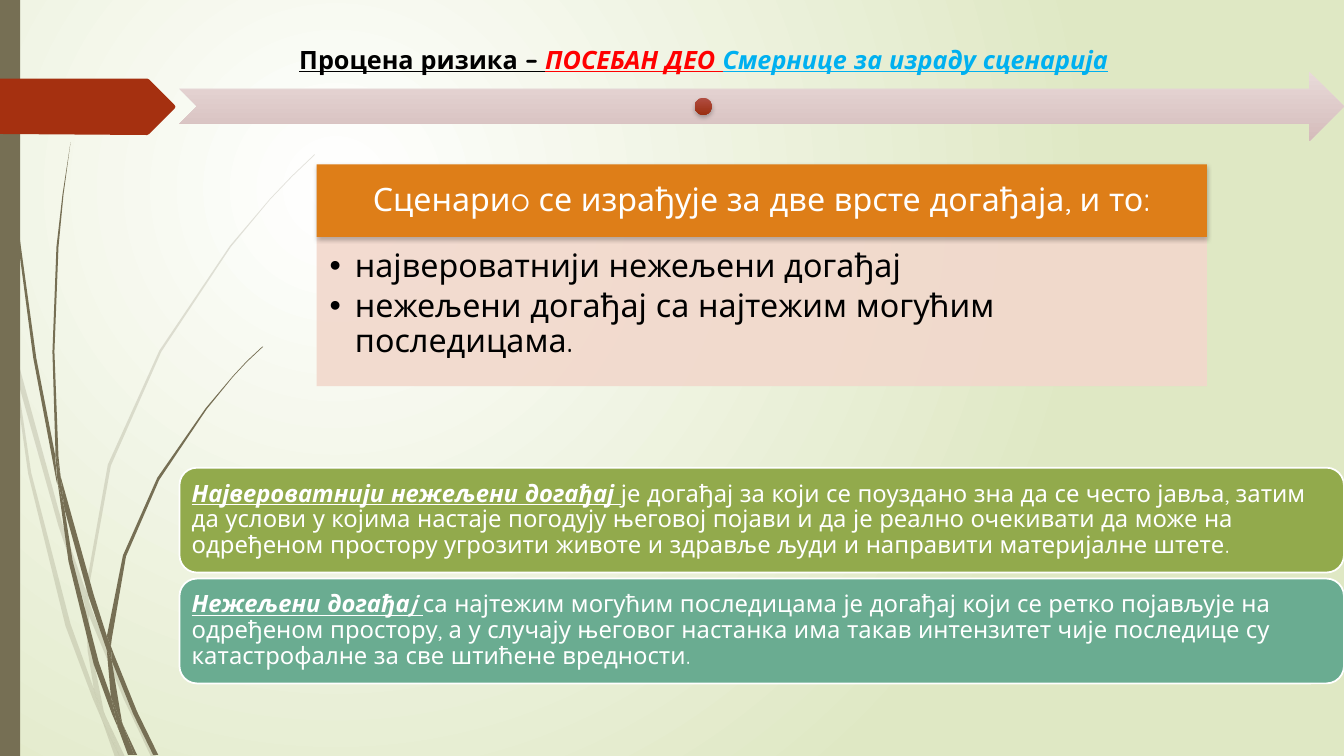
from lxml import etree
from pptx import Presentation
from pptx.dml.color import RGBColor
from pptx.enum.shapes import MSO_SHAPE
from pptx.enum.text import MSO_ANCHOR, MSO_AUTO_SIZE, PP_ALIGN
from pptx.oxml.ns import qn
from pptx.util import Pt

PX = 9144  # EMU in one px, 100 px to the inch
WIDTH, HEIGHT = 1333, 750
FONT = "Quicksand"
RECT, ROUNDED = MSO_SHAPE.RECTANGLE, MSO_SHAPE.ROUNDED_RECTANGLE
ARROW, OVAL = MSO_SHAPE.NOTCHED_RIGHT_ARROW, MSO_SHAPE.OVAL
TOP, MIDDLE, BOTTOM = MSO_ANCHOR.TOP, MSO_ANCHOR.MIDDLE, MSO_ANCHOR.BOTTOM
LEFT, CENTER = PP_ALIGN.LEFT, PP_ALIGN.CENTER
NO_AUTOFIT = MSO_AUTO_SIZE.NONE

WHITE = RGBColor(0xFF, 0xFF, 0xFF)
BLACK = RGBColor(0, 0, 0)
RED = RGBColor(0xFF, 0, 0)
SKY = RGBColor(0, 0xB0, 0xF0)
PALE_GREEN = RGBColor(0xDF, 0xE8, 0xC4)
OLIVE = RGBColor(0x76, 0x6F, 0x54)
RUST = RGBColor(0xA5, 0x30, 0x10)
ARROW_TOP, ARROW_BOTTOM = RGBColor(0xE8, 0xDA, 0xD9), RGBColor(0xD5, 0xBC, 0xBB)
DOT_TOP, DOT_BOTTOM = RGBColor(0xB1, 0x4E, 0x43), RGBColor(0x9A, 0x2D, 0x0F)
ORANGE = RGBColor(0xDE, 0x7E, 0x18)
PEACH = RGBColor(0xF2, 0xD8, 0xCC)
GREEN = RGBColor(0x92, 0xAA, 0x4C)
TEAL = RGBColor(0x6A, 0xAC, 0x91)

PALE_STALKS = [
    [(11, 350), (9, 322), (0, 282), (0, 299), (10, 344)],
    [(58, 522), (84, 599), (85, 586), (62, 520), (14, 345), (17, 376)],
    [(92, 607), (88, 596), (88, 610), (123, 694), (150, 751), (155, 751), (127, 692)],
    [(119, 751), (124, 751), (105, 711)],
    [(93, 683), (70, 619), (31, 469), (17, 376), (11, 350), (28, 470), (65, 621),
     (92, 693), (101, 714), (99, 707)],
    [(84, 599), (87, 646), (93, 683), (96, 692), (105, 711), (103, 706), (91, 646),
     (88, 610), (88, 608)],
    [(88, 584), (110, 462), (160, 349), (229, 245), (268, 198), (290, 175), (312, 154),
     (312, 153), (289, 175), (268, 197), (228, 244), (158, 348), (107, 461), (85, 584),
     (85, 586), (88, 596)],
    [(101, 714), (114, 751), (119, 751)],
    [(88, 608), (88, 610), (88, 596), (85, 586), (84, 599)],
    [(96, 692), (93, 683), (99, 707), (101, 714), (119, 751), (105, 711)],
]
DARK_STALKS = [
    [(7, 110), (17, 233), (33, 355), (56, 477), (57, 481), (55, 457), (55, 453),
     (36, 355), (19, 232), (8, 109), (5, 48), (4, 0), (3, 0), (4, 48)],
    [(88, 592), (106, 645), (106, 633), (106, 631), (93, 590), (60, 472), (64, 505)],
    [(113, 649), (110, 641), (111, 656), (132, 708), (152, 749), (157, 749), (136, 706)],
    [(110, 691), (98, 657), (72, 556), (64, 505), (57, 477), (68, 557), (93, 659),
     (111, 708), (117, 722), (116, 717)],
    [(60, 472), (58, 453), (54, 349), (58, 245), (63, 193), (70, 141), (62, 193),
     (56, 245), (52, 349), (55, 449)],
    [(133, 749), (136, 749), (122, 719)],
    [(57, 477), (64, 505), (60, 472), (55, 449), (55, 453)],
    [(111, 633), (125, 552), (158, 476), (205, 406), (231, 374), (245, 359), (261, 344),
     (260, 344), (245, 358), (231, 373), (204, 405), (156, 474), (122, 551), (106, 631),
     (110, 641)],
    [(117, 722), (127, 749), (131, 749)],
    [(106, 645), (110, 691), (116, 706), (122, 719), (121, 716), (111, 656), (109, 651)],
    [(106, 645), (109, 651), (111, 656), (110, 641), (106, 631), (106, 633)],
    [(116, 706), (110, 691), (116, 717), (117, 722), (130, 749), (133, 749), (122, 719)],
]
TAG = [(0, 78), (146, 78), (148, 79), (173, 104), (174, 106), (173, 108), (148, 133),
       (146, 134), (0, 133)]
EVENTS = [
    (GREEN, "Највероватнији нежељени догађај ",
     "је догађај за који се поуздано зна да се често јавља, затим да услови у којима "
     "настаје погодују његовој појави и да је реално очекивати да може на одређеном "
     "простору угрозити животе и здравље људи и направити материјалне штете."),
    (TEAL, "Нежељени догађаj ",
     "са најтежим могућим последицама је догађај који се ретко појављује на одређеном "
     "простору, а у случају његовог настанка има такав интензитет чије последице су "
     "катастрофалне за све штићене вредности."),
]


def write(frame, paragraphs, size, color, align=LEFT, anchor=MIDDLE,
          insets=(0, 0, 0, 0), bullets=False):
    """Fill a frame; each paragraph is a list of (text, font overrides)."""
    frame.word_wrap, frame.auto_size, frame.vertical_anchor = True, NO_AUTOFIT, anchor
    (frame.margin_left, frame.margin_top,
     frame.margin_right, frame.margin_bottom) = (inset * PX for inset in insets)
    for index, runs in enumerate(paragraphs):
        paragraph = frame.add_paragraph() if index else frame.paragraphs[0]
        paragraph.alignment, paragraph.line_spacing = align, 0.9
        paragraph.space_before, paragraph.space_after = 0, Pt(3.5 if bullets else 0)
        if bullets:
            properties = paragraph._p.get_or_add_pPr()
            properties.set("marL", str(25 * PX))
            properties.set("indent", str(-25 * PX))
            etree.SubElement(properties, qn("a:buChar"), char="•")
        for text, overrides in runs:
            run = paragraph.add_run()
            run.text = text
            look = {"bold": False, "italic": False, "underline": False,
                    "color": color, **overrides}
            run.font.name, run.font.size = FONT, Pt(size)
            run.font.color.rgb = look["color"]
            run.font.bold, run.font.italic = look["bold"], look["italic"]
            run.font.underline = look["underline"]


def paint(shape, *colors, opacity=100):
    """One colour gives a solid fill, two a gradient from top to bottom."""
    if len(colors) == 1:
        shape.fill.solid()
        shape.fill.fore_color.rgb = colors[0]
        if opacity < 100:
            tint = shape.element.spPr.find(qn("a:solidFill")).find(qn("a:srgbClr"))
            etree.SubElement(tint, qn("a:alpha"), val=str(opacity * 1000))
    else:
        shape.fill.gradient()
        shape.fill.gradient_angle = 270
        for stop, color in zip(shape.fill.gradient_stops, colors):
            stop.color.rgb = color


class ScenarioSlide:
    def __init__(self, presentation):
        self.slide = presentation.slides.add_slide(presentation.slide_layouts[1])
        self.shapes = self.slide.shapes

    def background(self, inner, outer):
        fill = self.slide.background.fill
        fill.gradient()
        for stop, color in zip(fill.gradient_stops, (inner, outer)):
            stop.color.rgb = color
        linear = next(self.slide.element.iter(qn("a:lin")))
        radial = etree.Element(qn("a:path"))
        radial.set("path", "circle")
        etree.SubElement(radial, qn("a:fillToRect"),
                         l="50000", t="50000", r="100000", b="100000")
        linear.getparent().replace(linear, radial)

    def outlines(self, shapes, pieces, color, opacity=100):
        for points in pieces:
            builder = shapes.build_freeform(*points[0], scale=PX)
            builder.add_line_segments(points[1:], close=True)
            piece = builder.convert_to_shape()
            piece.shadow.inherit = False
            piece.line.fill.background()
            paint(piece, color, opacity=opacity)

    def stalks(self, pieces, opacity=100):
        self.outlines(self.shapes.add_group_shape().shapes, pieces, OLIVE, opacity)

    def block(self, kind, box, *colors, outline=None, shadow=False):
        block = self.shapes.add_shape(kind, *(length * PX for length in box))
        block.shadow.inherit = False
        paint(block, *colors)
        if outline:
            block.line.color.rgb, block.line.width = outline, Pt(1.25)
        else:
            block.line.fill.background()
        if shadow:
            effects = block.element.spPr.find(qn("a:effectLst"))
            outer = etree.SubElement(effects, qn("a:outerShdw"), blurRad=str(Pt(3)),
                                     dist=str(Pt(2)), dir="5400000", rotWithShape="0")
            tint = etree.SubElement(outer, qn("a:srgbClr"), val="000000")
            etree.SubElement(tint, qn("a:alpha"), val="25000")
        return block

    def placeholder(self, index, box):
        holder = self.slide.placeholders[index]
        holder.left, holder.top, holder.width, holder.height = (n * PX for n in box)
        return holder


def main():
    presentation = Presentation()
    presentation.slide_width, presentation.slide_height = WIDTH * PX, HEIGHT * PX
    page = ScenarioSlide(presentation)
    page.background(WHITE, PALE_GREEN)
    page.stalks(PALE_STALKS, opacity=20)
    page.stalks(DARK_STALKS)
    page.block(RECT, (0, 0, 20, HEIGHT), OLIVE)
    page.outlines(page.shapes, [TAG], RUST)

    page.block(ARROW, (178, 71, 1155, 69), ARROW_TOP, ARROW_BOTTOM)
    page.block(OVAL, (689, 97, 17, 17), DOT_TOP, DOT_BOTTOM, shadow=True)
    heading = page.placeholder(0, (178, 19, 1040, 69))
    strong = {"bold": True, "underline": True}
    stressed = {**strong, "italic": True}
    write(heading.text_frame,
          [[("Процена ризика – ", strong),
            ("ПОСЕБАН ДЕО ", {**stressed, "color": RED}),
            ("Смернице за израду сценарија", {**stressed, "color": SKY})]],
          18, BLACK, align=CENTER, anchor=BOTTOM, insets=(14, 14, 14, 14))

    for row, (color, term, definition) in enumerate(EVENTS):
        event = page.block(ROUNDED, (178, 464 + 110 * row, 1155, 104), color,
                           outline=WHITE)
        write(event.text_frame, [[(term, stressed), (definition, {})]],
              17, WHITE, insets=(7, 7, 7, 7))

    intro = page.block(RECT, (314, 163, 883, 72), ORANGE, shadow=True)
    write(intro.text_frame,
          [[("Сценариo се израђује за две врсте догађаја, и то:", {})]],
          23, WHITE, align=CENTER, insets=(18, 10, 18, 10))
    kinds = page.placeholder(1, (314, 235, 883, 148))
    paint(kinds, PEACH, opacity=90)
    write(kinds.text_frame,
          [[("највероватнији нежељени догађај", {})],
           [("нежељени догађај са најтежим могућим последицама.", {})]],
          23, BLACK, anchor=TOP, insets=(13, 13, 18, 20), bullets=True)
    presentation.save("out.pptx")


if __name__ == "__main__":
    main()
